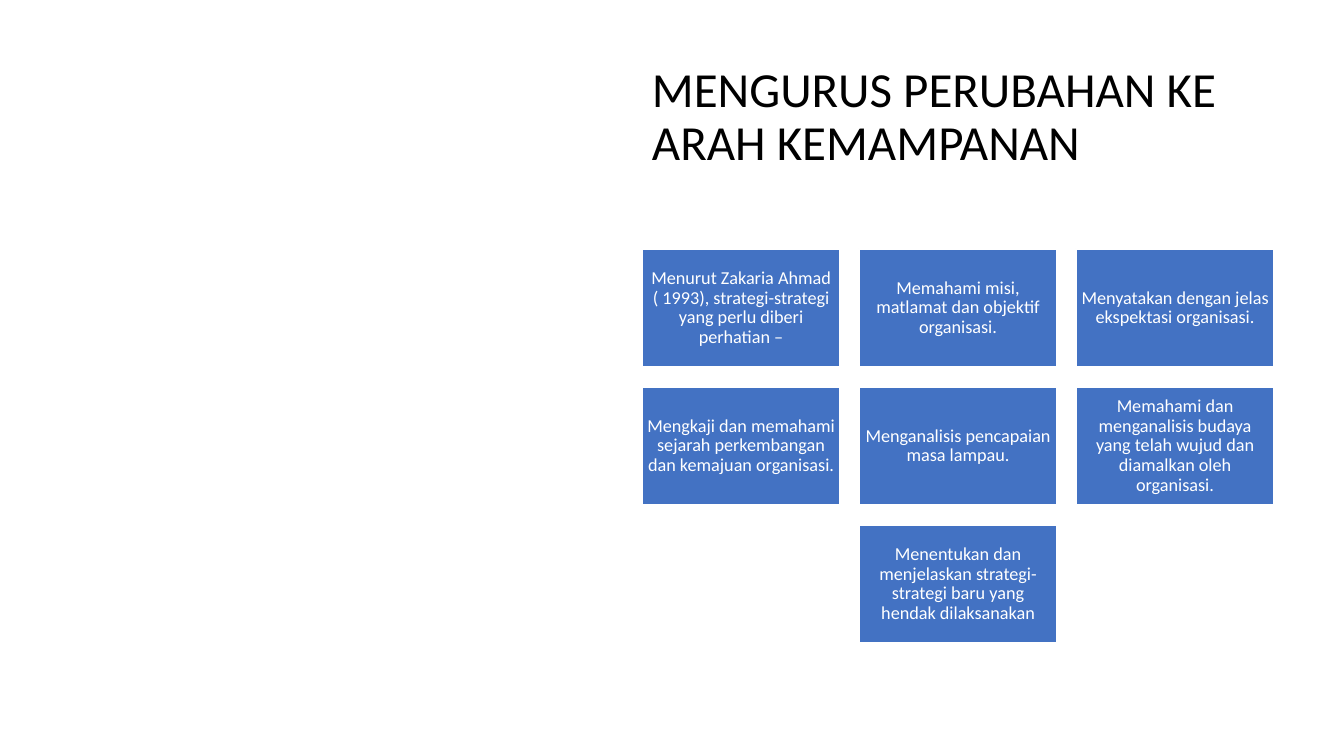
from dataclasses import dataclass

from pptx import Presentation
from pptx.dml.color import RGBColor
from pptx.enum.shapes import MSO_SHAPE
from pptx.enum.text import MSO_ANCHOR, PP_ALIGN
from pptx.shapes.autoshape import Shape
from pptx.slide import Slide
from pptx.util import Emu, Pt

PIXELS_PER_INCH = 100.8
FONT = "Calibri"
BLACK, WHITE, BLUE = "000000", "FFFFFF", "4372C3"
COLUMNS = 3
GRID_LEFT, GRID_TOP = 642, 249
CARD_WIDTH, CARD_HEIGHT = 198, 118
COLUMN_STEP, ROW_STEP = 217, 138

STRATEGIES = [
    "Menurut Zakaria Ahmad ( 1993), strategi-strategi yang perlu diberi perhatian –",
    "Memahami misi, matlamat dan objektif organisasi.",
    "Menyatakan dengan jelas ekspektasi organisasi.",
    "Mengkaji dan memahami sejarah perkembangan dan kemajuan organisasi.",
    "Menganalisis pencapaian masa lampau.",
    "Memahami dan menganalisis budaya yang telah wujud dan diamalkan oleh organisasi.",
    "Menentukan dan menjelaskan strategi-strategi baru yang hendak dilaksanakan",
]


@dataclass(frozen=True)
class Card:
    text: str
    left: int
    top: int


def px(length: int) -> Emu:
    return Emu(round(length * 914400 / PIXELS_PER_INCH))


def color(value: str) -> RGBColor:
    return RGBColor.from_string(value)


def write_text(shape: Shape, text: str, *, size: int, fill: str,
               align: PP_ALIGN, inset_x: int, inset_y: int) -> None:
    frame = shape.text_frame
    frame.word_wrap = True
    frame.vertical_anchor = MSO_ANCHOR.MIDDLE
    frame.margin_left = frame.margin_right = px(inset_x)
    frame.margin_top = frame.margin_bottom = px(inset_y)
    paragraph = frame.paragraphs[0]
    paragraph.alignment = align
    paragraph.line_spacing = 0.9
    run = paragraph.add_run()
    run.text = text
    run.font.name = FONT
    run.font.size = Pt(size)
    run.font.color.rgb = color(fill)


def arrange_cards(texts: list[str]) -> list[Card]:
    cards = []
    for row, start in enumerate(range(0, len(texts), COLUMNS)):
        row_texts = texts[start:start + COLUMNS]
        row_left = GRID_LEFT + (COLUMNS - len(row_texts)) * COLUMN_STEP // 2
        for column, text in enumerate(row_texts):
            cards.append(Card(text, row_left + column * COLUMN_STEP, GRID_TOP + row * ROW_STEP))
    return cards


def draw_title(slide: Slide) -> None:
    title = slide.shapes.add_textbox(px(GRID_LEFT), px(45), px(631), px(146))
    write_text(title, "MENGURUS PERUBAHAN KE ARAH KEMAMPANAN", size=35, fill=BLACK,
               align=PP_ALIGN.LEFT, inset_x=10, inset_y=5)


def draw_card(slide: Slide, card: Card) -> None:
    shape = slide.shapes.add_shape(MSO_SHAPE.RECTANGLE, px(card.left), px(card.top),
                                   px(CARD_WIDTH), px(CARD_HEIGHT))
    shape.shadow.inherit = False
    shape.fill.solid()
    shape.fill.fore_color.rgb = color(BLUE)
    shape.line.color.rgb = color(WHITE)
    shape.line.width = Pt(1)
    write_text(shape, card.text, size=13, fill=WHITE,
               align=PP_ALIGN.CENTER, inset_x=5, inset_y=5)


def main() -> None:
    presentation = Presentation()
    presentation.slide_width = px(1344)
    presentation.slide_height = px(756)
    slide = presentation.slides.add_slide(presentation.slide_layouts[6])
    draw_title(slide)
    for card in arrange_cards(STRATEGIES):
        draw_card(slide, card)
    presentation.save("out.pptx")


if __name__ == "__main__":
    main()
